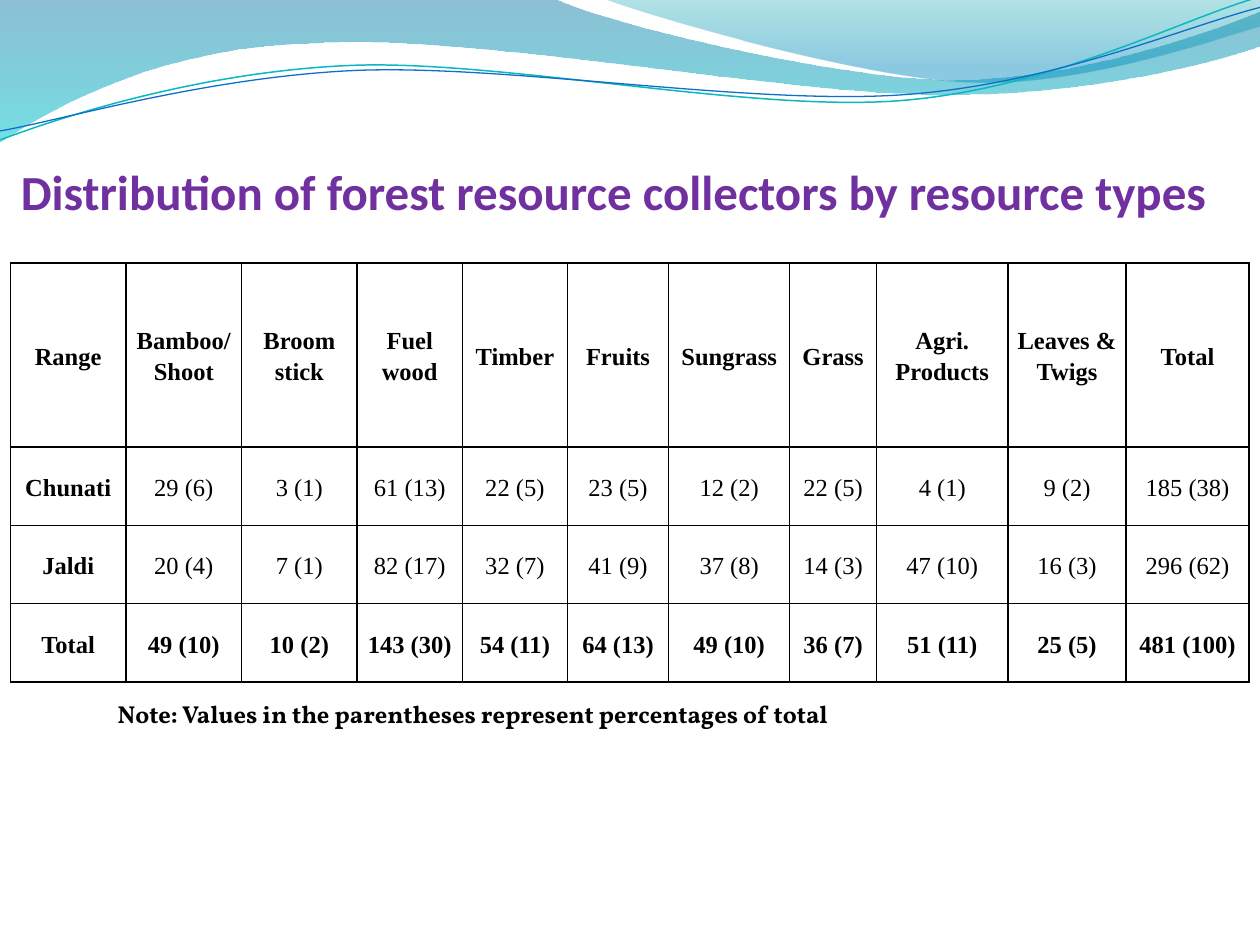
"""Build the slide on forest resource collectors by resource type."""
from dataclasses import dataclass
from math import cos, radians, sin
from typing import Optional

from lxml import etree
from pptx import Presentation
from pptx.dml.color import RGBColor
from pptx.enum import text as t
from pptx.oxml import ns
from pptx.util import Cm, Pt

BLACK = RGBColor(0x00, 0x00, 0x00)
PURPLE = RGBColor(0x70, 0x30, 0xA0)
DEEP_BLUE = RGBColor(0x00, 0x74, 0xA1)
CYAN = RGBColor(0x00, 0xC6, 0xCF)
TEAL = RGBColor(0x00, 0xA1, 0xA9)
SKY = RGBColor(0x00, 0x8B, 0xBF)
LINE_TEAL = RGBColor(0x0A, 0xB8, 0xBF)
LINE_BLUE = RGBColor(0x0F, 0x6F, 0xC6)

Point = tuple[float, float]
TILT = -2.7


@dataclass
class Stop:
    position: float
    color: RGBColor
    opacity: int


@dataclass
class Wave:
    start: Point
    segments: list[tuple[Point, ...]]
    stops: tuple[Stop, ...] = ()
    line_color: Optional[RGBColor] = None
    line_width: float = 0
    pivot: Optional[Point] = None


WAVES = [
    Wave((0, 0), [
        ((11.18, -0.03),),
        ((12.09, 0.43), (16.87, 1.6), (19.25, 1.6)),
        ((21.67, 1.6), (24.33, 0.66), (25.4, 0.23)),
        ((25.43, 0.91),),
        ((24.97, 1.12), (22.1, 1.93), (18.95, 1.91)),
        ((15.8, 1.9), (9.7, 0.71), (6.53, 0.86)),
        ((3.25, 0.91), (1.17, 2.11), (-0.03, 2.87)),
    ], stops=(Stop(0, DEEP_BLUE, 45), Stop(1, CYAN, 55))),
    Wave((12.17, -0.03), [
        ((12.93, 0.28), (17.32, 1.57), (19.53, 1.65)),
        ((21.74, 1.75), (24.41, 0.81), (25.4, 0.53)),
        ((25.4, 0),),
    ], stops=(Stop(0, TEAL, 30), Stop(0.8, SKY, 45))),
    Wave((0, 2.82), [
        ((1.22, 2.36), (4.01, 1.45), (7.04, 1.32)),
        ((10.03, 1.19), (15.06, 2.26), (18.11, 2.03)),
        ((21.16, 1.8), (23.83, 0.38), (25.35, -0.05)),
    ], line_color=LINE_TEAL, line_width=0.85, pivot=(12.67, 1.46)),
    Wave((0, 2.64), [
        ((1.19, 2.44), (4.17, 1.55), (7.19, 1.42)),
        ((10.24, 1.3), (15.16, 2.13), (18.21, 1.91)),
        ((21.23, 1.7), (23.9, 0.53), (25.4, 0.15)),
    ], line_color=LINE_BLUE, line_width=0.75, pivot=(12.69, 1.5)),
]

COLUMN_WIDTHS = [2.33, 2.33, 2.33, 2.12, 2.12, 2.04, 2.44, 1.75, 2.65, 2.38, 2.48]
ROW_HEIGHTS = [3.71, 1.58, 1.58, 1.58]
COLLECTORS = [
    ["Range", "Bamboo/ Shoot", "Broom stick", "Fuel wood", "Timber", "Fruits",
     "Sungrass", "Grass", "Agri. Products", "Leaves & Twigs", "Total"],
    ["Chunati", "29 (6)", "3 (1)", "61 (13)", "22 (5)", "23 (5)",
     "12 (2)", "22 (5)", "4 (1)", "9 (2)", "185 (38)"],
    ["Jaldi", "20 (4)", "7 (1)", "82 (17)", "32 (7)", "41 (9)",
     "37 (8)", "14 (3)", "47 (10)", "16 (3)", "296 (62)"],
    ["Total", "49 (10)", "10 (2)", "143 (30)", "54 (11)", "64 (13)",
     "49 (10)", "36 (7)", "51 (11)", "25 (5)", "481 (100)"],
]


def level(point: Point, pivot: Optional[Point]) -> tuple[int, int]:
    """Return the point in EMU, with the tilt about the pivot taken out."""
    x, y = point
    if pivot:
        dx, dy, angle = x - pivot[0], y - pivot[1], radians(-TILT)
        x = pivot[0] + dx * cos(angle) - dy * sin(angle)
        y = pivot[1] + dx * sin(angle) + dy * cos(angle)
    return Cm(x), Cm(y)


def draw_wave(slide, wave: Wave) -> None:
    """Draw a filled band or a thin line of the header."""
    segments = [[level(p, wave.pivot) for p in segment] for segment in wave.segments]
    builder = slide.shapes.build_freeform(*level(wave.start, wave.pivot))
    builder.add_line_segments([segment[-1] for segment in segments], close=bool(wave.stops))
    shape = builder.convert_to_shape()
    shape.shadow.inherit = False
    for edge, segment in zip(list(shape.element.iter(ns.qn("a:lnTo"))), segments):
        if len(segment) == 3:
            edge.tag = ns.qn("a:cubicBezTo")
            edge.clear()
            for x, y in segment:
                etree.SubElement(edge, ns.qn("a:pt"),
                                 x=str(x - shape.left), y=str(y - shape.top))
    if wave.pivot:
        shape.rotation = TILT
    if wave.stops:
        shape.line.fill.background()
        shape.fill.gradient()
        shape.fill.gradient_angle = 270
        for target, stop in zip(shape.fill.gradient_stops, wave.stops):
            target.position = stop.position
            target.color.rgb = stop.color
        for color, stop in zip(shape.element.spPr.iter(ns.qn("a:srgbClr")), wave.stops):
            etree.SubElement(color, ns.qn("a:alpha"), val=str(stop.opacity * 1000))
    else:
        shape.fill.background()
        shape.line.color.rgb = wave.line_color
        shape.line.width = Pt(wave.line_width)


def set_font(paragraph, name: str, size: int, color: RGBColor, bold: bool = True) -> None:
    """Format the whole paragraph."""
    font = paragraph.font
    font.name, font.size, font.bold = name, Pt(size), bold
    font.color.rgb = color


def set_borders(cell) -> None:
    """Give a cell a black one-point border on each side."""
    properties = cell._tc.get_or_add_tcPr()
    for side in ("lnL", "lnR", "lnT", "lnB"):
        border = etree.SubElement(properties, ns.qn(f"a:{side}"), w=str(Pt(1)))
        fill = etree.SubElement(border, ns.qn("a:solidFill"))
        etree.SubElement(fill, ns.qn("a:srgbClr"), val=str(BLACK))


def draw_table(slide) -> None:
    """Draw the table of collectors."""
    table = slide.shapes.add_table(
        len(ROW_HEIGHTS), len(COLUMN_WIDTHS), Cm(0.21), Cm(5.3),
        Cm(sum(COLUMN_WIDTHS)), Cm(sum(ROW_HEIGHTS))).table
    table.first_row = table.horz_banding = False
    for column, width in zip(table.columns, COLUMN_WIDTHS):
        column.width = Cm(width)
    for row, height in zip(table.rows, ROW_HEIGHTS):
        row.height = Cm(height)
    last_row = len(COLLECTORS) - 1
    for r, values in enumerate(COLLECTORS):
        for c, value in enumerate(values):
            cell = table.cell(r, c)
            cell.text = value
            cell.vertical_anchor = t.MSO_ANCHOR.MIDDLE
            cell.margin_left = cell.margin_right = Cm(0.18)
            cell.margin_top = cell.margin_bottom = 0
            paragraph = cell.text_frame.paragraphs[0]
            paragraph.alignment = t.PP_ALIGN.CENTER
            paragraph.line_spacing = 1.15
            set_font(paragraph, "Times New Roman", 14, BLACK, r in (0, last_row) or c == 0)
            set_borders(cell)
            cell.fill.background()


def place_title(slide) -> None:
    """Fill the title placeholder and bring it in front of the waves."""
    title = slide.shapes.title
    title.left, title.top, title.width, title.height = Cm(0.42), Cm(2.34), Cm(24.56), Cm(2.11)
    frame = title.text_frame
    frame.text = "Distribution of forest resource collectors by resource types"
    frame.vertical_anchor = t.MSO_ANCHOR.BOTTOM
    frame.auto_size = t.MSO_AUTO_SIZE.NONE
    frame.margin_left = frame.margin_right = frame.margin_bottom = 0
    frame.margin_top = Cm(0.13)
    frame.paragraphs[0].alignment = t.PP_ALIGN.LEFT
    set_font(frame.paragraphs[0], "Calibri", 28, PURPLE)
    slide.shapes.element.append(title.element)


def draw_note(slide) -> None:
    """Write the note under the table."""
    note = slide.shapes.add_textbox(Cm(2.12), Cm(13.97), Cm(17.58), Cm(0.86)).text_frame
    note.word_wrap = True
    note.auto_size = t.MSO_AUTO_SIZE.SHAPE_TO_FIT_TEXT
    note.text = "Note: Values in the parentheses represent percentages of total"
    set_font(note.paragraphs[0], "Vollkorn", 14, BLACK)


def main() -> None:
    """Build and save the slide."""
    deck = Presentation()
    deck.slide_width, deck.slide_height = Cm(25.4), Cm(19.05)
    slide = deck.slides.add_slide(deck.slide_layouts[5])
    for wave in WAVES:
        draw_wave(slide, wave)
    place_title(slide)
    draw_table(slide)
    draw_note(slide)
    deck.save("out.pptx")


if __name__ == "__main__":
    main()
